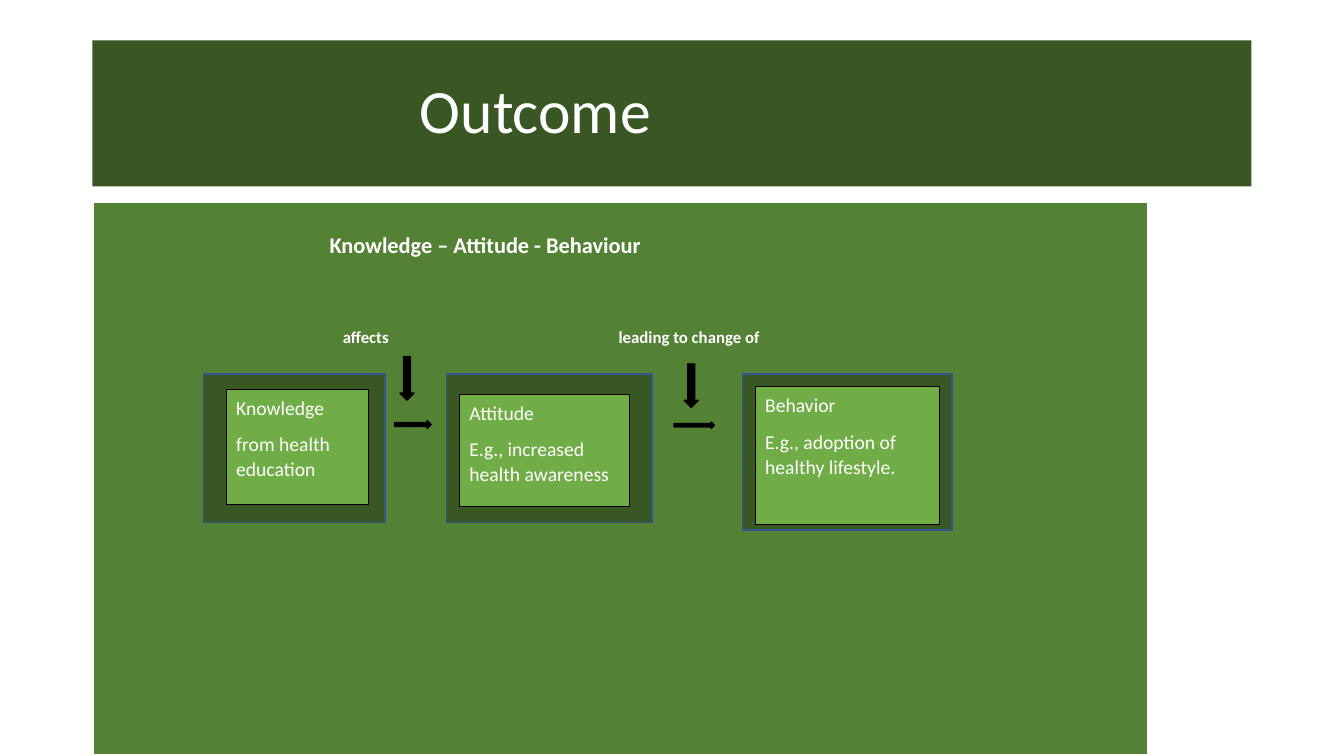
from lxml import etree
from pptx import Presentation
from pptx.dml.color import RGBColor
from pptx.enum.shapes import MSO_SHAPE
from pptx.enum.text import MSO_ANCHOR, PP_ALIGN
from pptx.oxml.ns import qn
from pptx.util import Pt

RECTANGLE = MSO_SHAPE.RECTANGLE
DOWN_ARROW = MSO_SHAPE.DOWN_ARROW
RIGHT_ARROW = MSO_SHAPE.RIGHT_ARROW
LEFT = PP_ALIGN.LEFT
TOP = MSO_ANCHOR.TOP
MIDDLE = MSO_ANCHOR.MIDDLE

FONT = "Calibri"
WHITE = "FFFFFF"
BLACK = "000000"
DARK_GREEN = "385723"
MID_GREEN = "548235"
LIGHT_GREEN = "70AD47"
BLUE = "325491"


def color(value):
    return RGBColor.from_string(value)


def add_block(slide, kind, box, fill, line=None, line_width=1):
    shape = slide.shapes.add_shape(kind, *(Pt(length) for length in box))
    shape.shadow.inherit = False
    shape.fill.solid()
    shape.fill.fore_color.rgb = color(fill)
    if line:
        shape.line.color.rgb = color(line)
        shape.line.width = Pt(line_width)
    else:
        shape.line.fill.background()
    return shape


def style_paragraph(paragraph, size, bold=False, spacing=1.07, after=8):
    paragraph.alignment = LEFT
    paragraph.line_spacing = spacing
    paragraph.space_after = Pt(after)
    for run in paragraph.runs:
        run.font.name = FONT
        run.font.size = Pt(size)
        run.font.bold = bold
        run.font.color.rgb = color(WHITE)


def add_tab_stops(paragraph, positions):
    properties = paragraph._p.get_or_add_pPr()
    tab_list = etree.SubElement(properties, qn("a:tabLst"))
    for position in positions:
        etree.SubElement(tab_list, qn("a:tab"), pos=str(Pt(position)), algn="l")


def set_cell_borders(cell, widths):
    properties = cell._tc.get_or_add_tcPr()
    for index, (side, width) in enumerate(widths.items()):
        border = etree.Element(qn("a:" + side), w=str(Pt(width)))
        fill = etree.SubElement(border, qn("a:solidFill"))
        etree.SubElement(fill, qn("a:srgbClr"), val=WHITE)
        properties.insert(index, border)


def add_title(slide, box):
    title = add_block(slide, RECTANGLE, box, DARK_GREEN)
    text_frame = title.text_frame
    text_frame.word_wrap = True
    text_frame.vertical_anchor = MIDDLE
    text_frame.margin_left = Pt(234)
    text_frame.text = "Outcome"
    style_paragraph(text_frame.paragraphs[0], 44, spacing=0.9, after=0)


def add_panel(slide, box):
    frame = slide.shapes.add_table(1, 1, *(Pt(length) for length in box))
    table = frame.table
    table.first_row = False
    table.horz_banding = False
    cell = table.cell(0, 0)
    cell.fill.solid()
    cell.fill.fore_color.rgb = color(MID_GREEN)
    cell.margin_left = cell.margin_right = Pt(4.5)
    cell.margin_top = Pt(20)
    cell.margin_bottom = 0
    cell.vertical_anchor = TOP
    set_cell_borders(cell, {"lnL": 1, "lnR": 1, "lnT": 1, "lnB": 3})

    lines = [
        ("\tKnowledge – Attitude - Behaviour", 16, 47.5, [164.5]),
        ("\taffects\tleading to change of", 12, 8, [174, 371]),
    ]
    cell.text_frame.text = "\n".join(line[0] for line in lines)
    for paragraph, (_, size, after, stops) in zip(cell.text_frame.paragraphs, lines):
        style_paragraph(paragraph, size, bold=True, after=after)
        add_tab_stops(paragraph, stops)


def add_stage(slide, box, inset, card_size, texts):
    left, top, _, _ = box
    add_block(slide, RECTANGLE, box, DARK_GREEN, BLUE)
    card_box = (left + inset[0], top + inset[1], *card_size)
    card = add_block(slide, RECTANGLE, card_box, LIGHT_GREEN, BLACK, 0.75)
    text_frame = card.text_frame
    text_frame.word_wrap = True
    text_frame.vertical_anchor = TOP
    text_frame.text = "\n".join(texts)
    for paragraph in text_frame.paragraphs:
        style_paragraph(paragraph, 14)


def add_step_arrows(slide, down_box, right_box):
    for kind, box in ((DOWN_ARROW, down_box), (RIGHT_ARROW, right_box)):
        add_block(slide, kind, box, BLACK, BLACK)


def build_outcome_slide(presentation):
    slide = presentation.slides.add_slide(presentation.slide_layouts[6])
    add_title(slide, (66, 28.8, 828, 104.4))
    add_panel(slide, (66.4, 144.8, 753, 395.2))

    stage_top = 267.3
    stages = [
        (145.4, 129.6, 105.8, (16.2, 10.6), (101.5, 82.8),
         ["Knowledge", "from health education"]),
        (319, 146.9, 105.8, (9.2, 14.2), (121.7, 80.5),
         ["Attitude", "E.g., increased health awareness"]),
        (530.5, 149.5, 111.4, (9, 8.9), (131.8, 98.6),
         ["Behavior", "E.g., adoption of healthy lifestyle."]),
    ]
    for left, width, height, inset, card_size, texts in stages:
        add_stage(slide, (left, stage_top, width, height), inset, card_size, texts)

    add_step_arrows(slide, (285.7, 254.8, 10, 31), (282, 300.3, 26, 5.8))
    add_step_arrows(slide, (488.8, 260, 10, 31), (481.5, 301.5, 28.8, 4.5))


def main():
    presentation = Presentation()
    presentation.slide_width = Pt(960)
    presentation.slide_height = Pt(540)
    build_outcome_slide(presentation)
    presentation.save("out.pptx")


if __name__ == "__main__":
    main()
